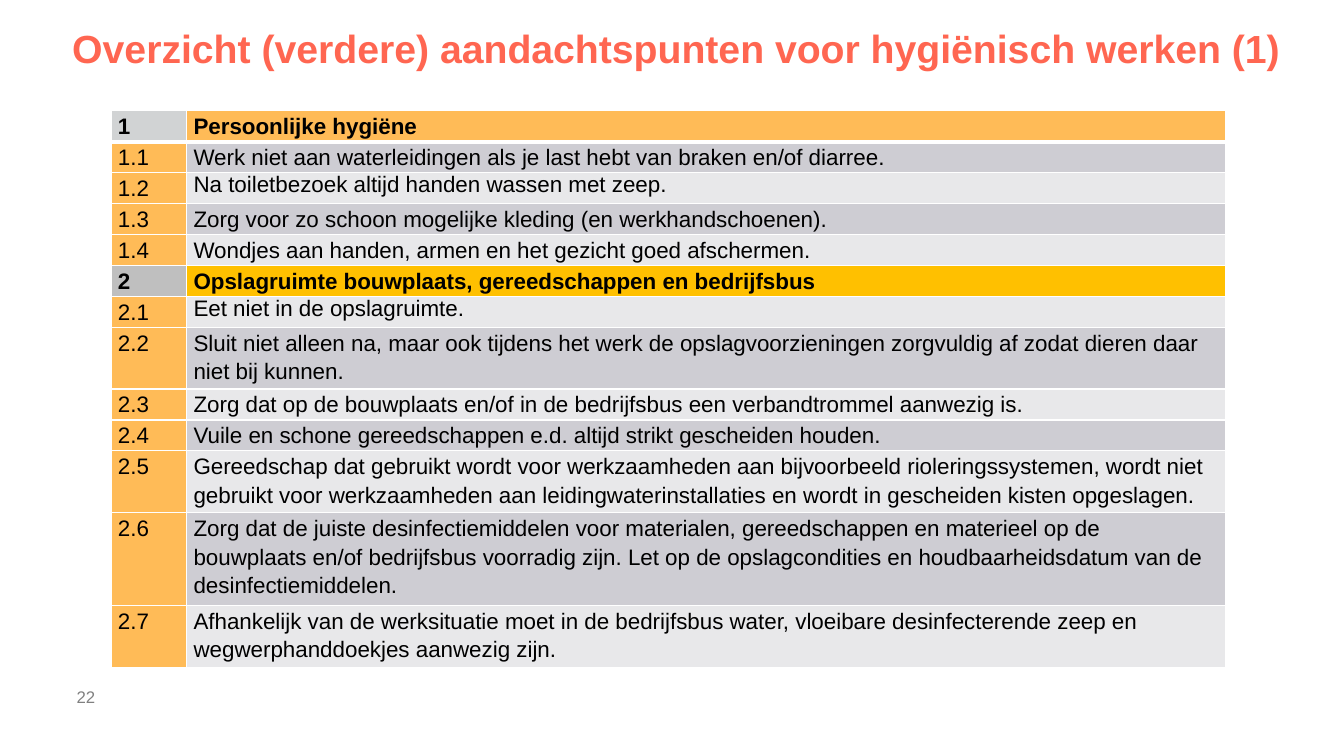
from dataclasses import dataclass

from lxml import etree
from pptx import Presentation
from pptx.dml.color import RGBColor
from pptx.enum.text import MSO_ANCHOR, PP_ALIGN
from pptx.oxml.ns import qn
from pptx.util import Emu, Pt

MIDDLE = MSO_ANCHOR.MIDDLE
LEFT, CENTER = PP_ALIGN.LEFT, PP_ALIGN.CENTER

PX = 9144  # 100 px to the inch
FONT = "Arial"
BLACK, WHITE, GRAY, CORAL = "000000", "FFFFFF", "808080", "FF6651"
ORANGE, AMBER = "FFBB57", "FFC000"
DARK_BAND, LIGHT_BAND = "CECDD3", "E8E8EA"
COLUMN_WIDTHS = (75, 1031)
ROW_HEIGHT = 30
CELL_INSET = 7


@dataclass
class Label:
    text: str
    left: int
    top: int
    width: int
    height: int
    size: int
    color: str
    bold: bool = False
    align: int = LEFT
    spacing: float = 1.0


@dataclass
class Rule:
    number: str
    text: str
    number_fill: str = ORANGE
    heading_fill: str = ""  # set on section headings only
    spacing: float = 1.15
    space_after: int = 0


LABELS = [
    Label("22", 76, 671, 71, 40, 12, GRAY),
    Label("Overzicht (verdere) aandachtspunten voor hygiënisch werken (1)",
          62, 23, 1217, 54, 28, CORAL, True, CENTER, 0.9),
]

RULES = [
    Rule("1", "Persoonlijke hygiëne", "D1D3D4", ORANGE),
    Rule("1.1", "Werk niet aan waterleidingen als je last hebt van braken en/of diarree."),
    Rule("1.2", "Na toiletbezoek altijd handen wassen met zeep.", spacing=1.0),
    Rule("1.3", "Zorg voor zo schoon mogelijke kleding (en werkhandschoenen)."),
    Rule("1.4", "Wondjes aan handen, armen en het gezicht goed afschermen."),
    Rule("2", "Opslagruimte bouwplaats, gereedschappen en bedrijfsbus", "BFBFBF", AMBER),
    Rule("2.1", "Eet niet in de opslagruimte.", spacing=1.0),
    Rule("2.2", "Sluit niet alleen na, maar ook tijdens het werk de opslagvoorzieningen "
                "zorgvuldig af zodat dieren daar niet bij kunnen."),
    Rule("2.3", "Zorg dat op de bouwplaats en/of in de bedrijfsbus een verbandtrommel "
                "aanwezig is."),
    Rule("2.4", "Vuile en schone gereedschappen e.d. altijd strikt gescheiden houden."),
    Rule("2.5", "Gereedschap dat gebruikt wordt voor werkzaamheden aan bijvoorbeeld "
                "rioleringssystemen, wordt niet gebruikt voor werkzaamheden aan "
                "leidingwaterinstallaties en wordt in gescheiden kisten opgeslagen.",
         space_after=10),
    Rule("2.6", "Zorg dat de juiste desinfectiemiddelen voor materialen, gereedschappen en "
                "materieel op de bouwplaats en/of bedrijfsbus voorradig zijn. Let op de "
                "opslagcondities en houdbaarheidsdatum van de desinfectiemiddelen."),
    Rule("2.7", "Afhankelijk van de werksituatie moet in de bedrijfsbus water, vloeibare "
                "desinfecterende zeep en wegwerphanddoekjes aanwezig zijn."),
]


def px(length: int) -> Emu:
    return Emu(length * PX)


def rgb(color: str) -> RGBColor:
    return RGBColor.from_string(color)


def write(frame, text: str, size: int, color: str, bold: bool, spacing: float):
    """Put one formatted paragraph in a text frame and return it."""
    frame.text = text
    para = frame.paragraphs[0]
    para.line_spacing = spacing
    for span in para.runs:
        span.font.name = FONT
        span.font.size = Pt(size)
        span.font.bold = bold
        span.font.color.rgb = rgb(color)
    return para


def add_label(page, label: Label) -> None:
    box = page.shapes.add_textbox(px(label.left), px(label.top),
                                  px(label.width), px(label.height))
    frame = box.text_frame
    frame.word_wrap = True
    frame.vertical_anchor = MIDDLE
    frame.margin_left = frame.margin_right = frame.margin_top = frame.margin_bottom = 0
    para = write(frame, label.text, label.size, label.color, label.bold, label.spacing)
    para.alignment = label.align


def add_borders(cell, top: int, bottom: int) -> None:
    """Draw white cell borders; side borders are 1 point wide."""
    properties = cell._tc.get_or_add_tcPr()
    for side, width in (("L", 1), ("R", 1), ("T", top), ("B", bottom)):
        line = etree.SubElement(properties, qn(f"a:ln{side}"), w=str(Pt(width)))
        fill = etree.SubElement(line, qn("a:solidFill"))
        etree.SubElement(fill, qn("a:srgbClr"), val=WHITE)


def fill_cell(cell, text: str, fill: str, rule: Rule, spacing: float, row: int):
    add_borders(cell, top=3 if row == 1 else 1, bottom=3 if row == 0 else 1)
    cell.fill.solid()
    cell.fill.fore_color.rgb = rgb(fill)
    cell.margin_left = cell.margin_right = px(CELL_INSET)
    cell.margin_top = cell.margin_bottom = 0
    return write(cell.text_frame, text, 16, BLACK, bool(rule.heading_fill), spacing)


def add_rules(page, left: int, top: int) -> None:
    table = page.shapes.add_table(len(RULES), len(COLUMN_WIDTHS), px(left), px(top),
                                  px(sum(COLUMN_WIDTHS)),
                                  px(ROW_HEIGHT * len(RULES))).table
    for column, width in zip(table.columns, COLUMN_WIDTHS):
        column.width = px(width)
    for row, rule in enumerate(RULES):
        table.rows[row].height = px(ROW_HEIGHT)
        band = DARK_BAND if row % 2 else LIGHT_BAND
        fill_cell(table.cell(row, 0), rule.number, rule.number_fill, rule, 1.15, row)
        para = fill_cell(table.cell(row, 1), rule.text, rule.heading_fill or band,
                         rule, rule.spacing, row)
        if rule.space_after:
            para.space_after = Pt(rule.space_after)


def main() -> None:
    deck = Presentation()
    deck.slide_width, deck.slide_height = px(1333), px(750)
    page = deck.slides.add_slide(deck.slide_layouts[6])

    # Page number and title
    for label in LABELS:
        add_label(page, label)

    # Hygiene rules
    add_rules(page, left=110, top=110)

    deck.save("out.pptx")


if __name__ == "__main__":
    main()
